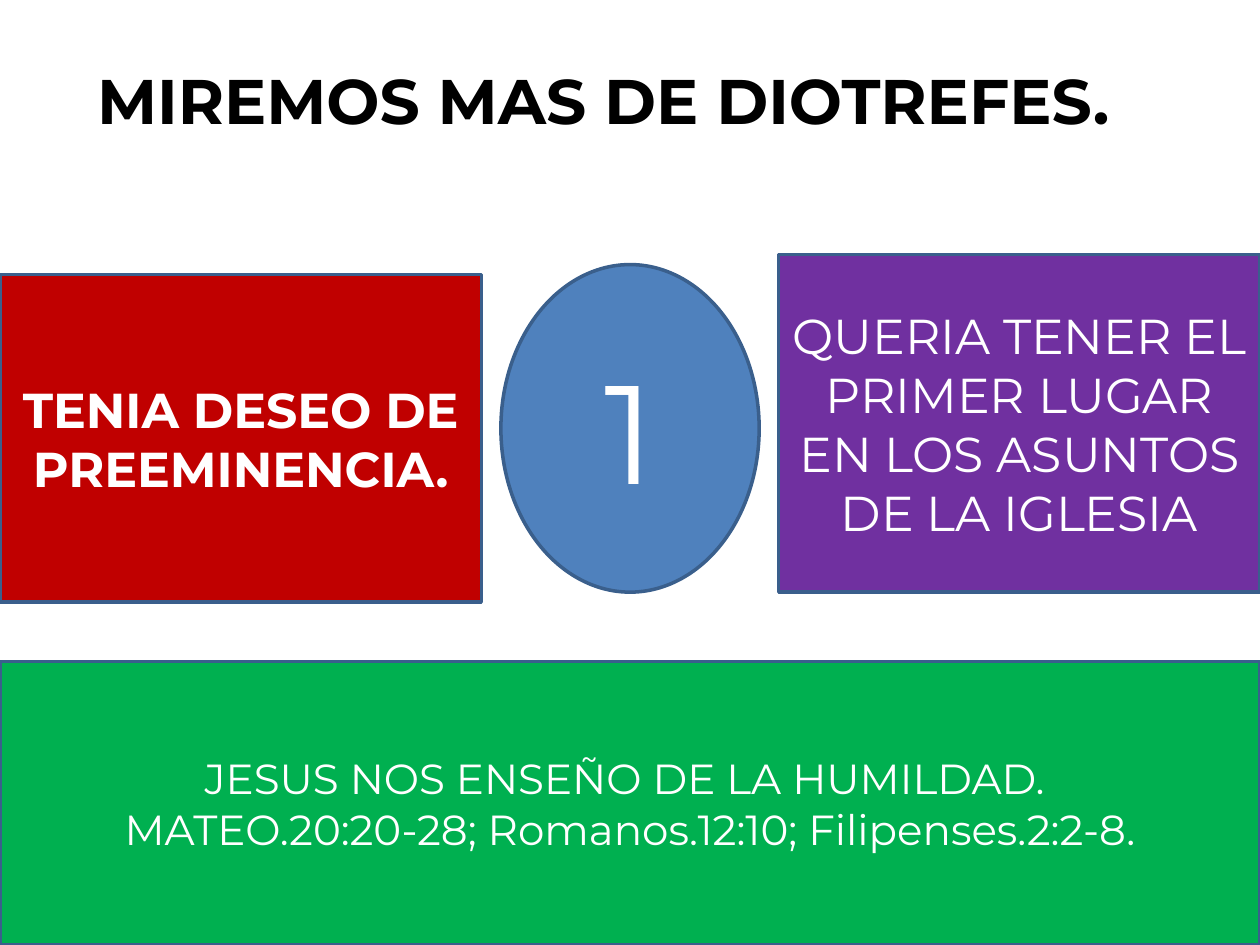
from dataclasses import dataclass

from pptx import Presentation
from pptx import util as u
from pptx.dml import color
from pptx.enum import shapes, text


@dataclass(frozen=True)
class Theme:
    font: str = "Montserrat"
    black: str = "000000"
    white: str = "FFFFFF"
    outline: str = "3A5F8C"
    red: str = "C00000"
    blue: str = "4F81BD"
    purple: str = "7030A0"
    green: str = "00B050"
    title_size: int = 36
    panel_size: int = 28
    number_size: int = 80
    verse_size: int = 24
    outline_width: int = 2


THEME = Theme()
SLIDE_WIDTH, SLIDE_HEIGHT = 10, 7.5
PANEL_WIDTH = 3.82
CIRCLE_WIDTH = 2.05
VERSE_TOP = 5.25


def rgb(value):
    return color.RGBColor.from_string(value)


def write(frame, *lines, size, ink=THEME.white, bold=False,
          align=text.PP_ALIGN.CENTER, anchor=text.MSO_ANCHOR.MIDDLE):
    frame.word_wrap = True
    frame.vertical_anchor = anchor
    for index, line in enumerate(lines):
        paragraph = frame.add_paragraph() if index else frame.paragraphs[0]
        paragraph.alignment = align
        run = paragraph.add_run()
        run.text = line
        run.font.name = THEME.font
        run.font.size = u.Pt(size)
        run.font.bold = bold
        run.font.color.rgb = rgb(ink)


def add_title(slide, wording):
    title = slide.shapes.title
    title.left, title.top = u.Inches(0.67), u.Inches(0.44)
    title.width, title.height = u.Inches(8.74), u.Inches(0.71)
    write(title.text_frame, wording, size=THEME.title_size, ink=THEME.black,
          bold=True, align=text.PP_ALIGN.LEFT, anchor=text.MSO_ANCHOR.TOP)


def add_panel(slide, left, top, width, height, fill, *lines,
              kind=shapes.MSO_SHAPE.RECTANGLE, **style):
    panel = slide.shapes.add_shape(
        kind, *(u.Inches(length) for length in (left, top, width, height)))
    panel.shadow.inherit = False
    panel.fill.solid()
    panel.fill.fore_color.rgb = rgb(fill)
    panel.line.color.rgb = rgb(THEME.outline)
    panel.line.width = u.Pt(THEME.outline_width)
    write(panel.text_frame, *lines, **style)


def main():
    deck = Presentation()
    deck.slide_width = u.Inches(SLIDE_WIDTH)
    deck.slide_height = u.Inches(SLIDE_HEIGHT)
    slide = deck.slides.add_slide(deck.slide_layouts[5])

    add_title(slide, "MIREMOS MAS DE DIOTREFES.")
    add_panel(slide, 0, 2.18, PANEL_WIDTH, 2.6, THEME.red,
              "TENIA DESEO DE PREEMINENCIA.",
              size=THEME.panel_size, bold=True)
    add_panel(slide, (SLIDE_WIDTH - CIRCLE_WIDTH) / 2, 2.1, CIRCLE_WIDTH, 2.6,
              THEME.blue, "1", kind=shapes.MSO_SHAPE.OVAL,
              size=THEME.number_size)
    add_panel(slide, SLIDE_WIDTH - PANEL_WIDTH, 2.02, PANEL_WIDTH, 2.68,
              THEME.purple,
              "QUERIA TENER EL PRIMER LUGAR EN LOS ASUNTOS DE LA IGLESIA",
              size=THEME.panel_size)
    add_panel(slide, 0, VERSE_TOP, SLIDE_WIDTH, SLIDE_HEIGHT - VERSE_TOP,
              THEME.green, "JESUS NOS ENSEÑO DE LA HUMILDAD. ",
              "MATEO.20:20-28; Romanos.12:10; Filipenses.2:2-8.",
              size=THEME.verse_size)

    deck.save("out.pptx")


if __name__ == "__main__":
    main()
